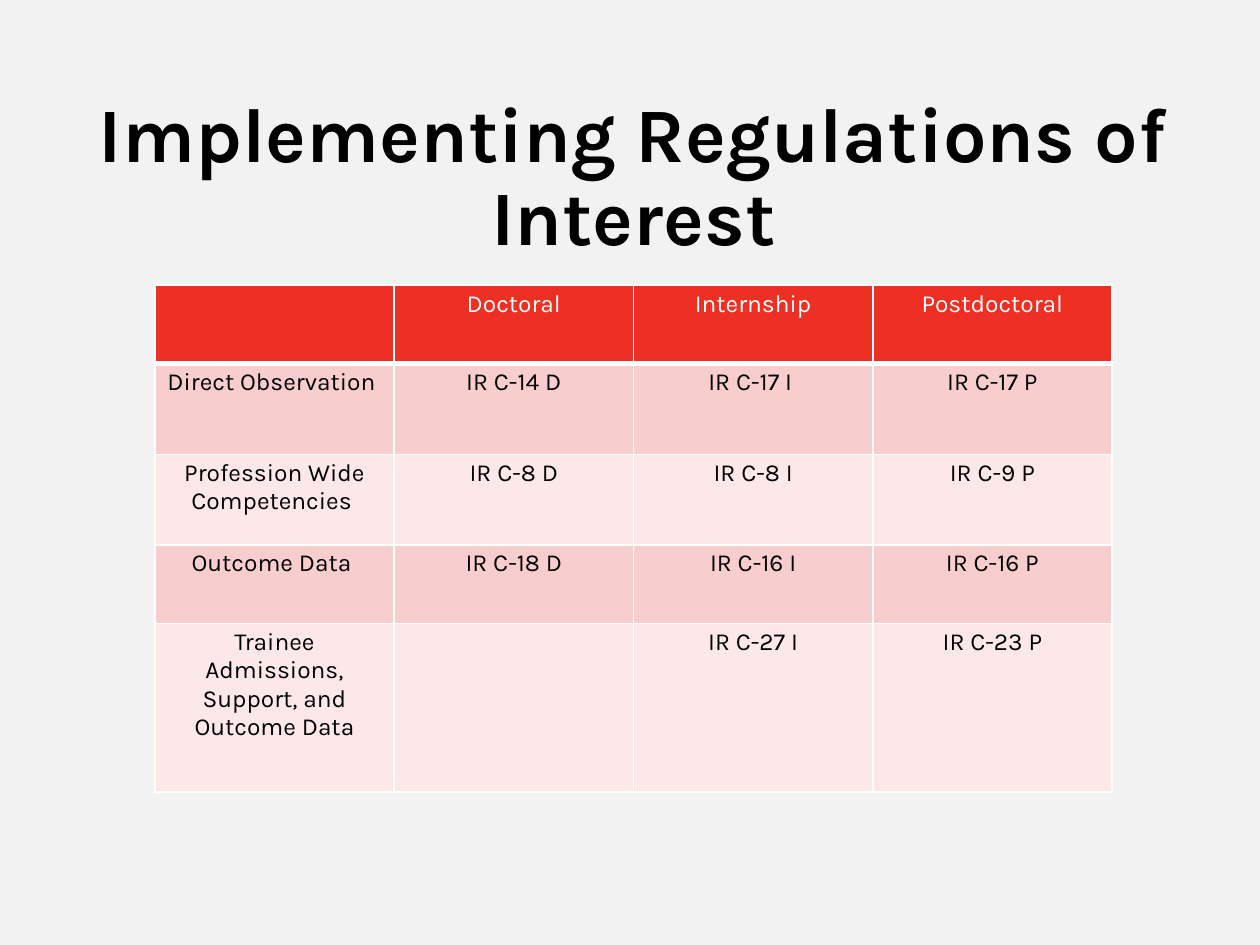
import pptx
import pptx.chart.data
import pptx.dml.color
import pptx.enum.text
import pptx.oxml
import pptx.oxml.ns
import pptx.util
from lxml import etree

TITLE = "Implementing Regulations of Interest"
ROWS = [
    ("", "Doctoral", "Internship", "Postdoctoral"),
    ("Direct Observation ", "IR C-14 D", "IR C-17 I ", "IR C-17 P"),
    ("Profession Wide Competencies ", "IR C-8 D", "IR C-8 I", "IR C-9 P"),
    ("Outcome Data ", "IR C-18 D", "IR C-16 I", "IR C-16 P"),
    ("Trainee Admissions, Support, and Outcome Data", "", "IR C-27 I", "IR C-23 P"),
]
ROW_HEIGHTS = [44.8, 51.8, 51.8, 44.8, 96.4]
COLUMN_WIDTH = 136.75
COLORS = {
    "background": "F2F2F2",
    "title": "000000",
    "header": "ED3023",
    "header_text": "FFFFFF",
    "odd": "F8CDCD",
    "even": "FCE8E8",
    "body_text": "000000",
    "border": "FFFFFF",
}
FONT = "Karla"
Pt = pptx.util.Pt


def color(name):
    """Return the named colour."""
    return pptx.dml.color.RGBColor.from_string(COLORS[name])


def format_text(text_frame, size, color_name, bold=False):
    """Centre the text and set its font."""
    for paragraph in text_frame.paragraphs:
        paragraph.alignment = pptx.enum.text.PP_ALIGN.CENTER
        for run in paragraph.runs:
            run.font.name = FONT
            run.font.size = Pt(size)
            run.font.bold = bold
            run.font.color.rgb = color(color_name)


def add_borders(cell, bottom_width):
    """Draw the four borders of a cell."""
    qn = pptx.oxml.ns.qn
    properties = cell._tc.get_or_add_tcPr()
    for side, width in (("L", 1), ("R", 1), ("T", 1), ("B", bottom_width)):
        line = etree.SubElement(properties, qn(f"a:ln{side}"), w=str(Pt(width)))
        fill = etree.SubElement(line, qn("a:solidFill"))
        etree.SubElement(fill, qn("a:srgbClr"), val=COLORS["border"])


def add_title(slide):
    """Place and format the title."""
    title = slide.shapes.title
    title.left, title.top, title.width, title.height = Pt(41), Pt(60.5), Pt(642), Pt(89.3)
    text_frame = title.text_frame
    text_frame.text = TITLE
    text_frame.word_wrap = True
    text_frame.auto_size = pptx.enum.text.MSO_AUTO_SIZE.NONE
    text_frame.vertical_anchor = pptx.enum.text.MSO_ANCHOR.BOTTOM
    text_frame.margin_left = text_frame.margin_right = 0
    text_frame.margin_top = text_frame.margin_bottom = 0
    text_frame.paragraphs[0].line_spacing = 0.9
    format_text(text_frame, 44, "title", bold=True)


def add_regulations_table(slide):
    """Build the table of regulations by training level."""
    column_count = len(ROWS[0])
    table = slide.shapes.add_table(
        len(ROWS), column_count, Pt(88.5), Pt(163),
        Pt(COLUMN_WIDTH * column_count), Pt(sum(ROW_HEIGHTS)),
    ).table
    for column in table.columns:
        column.width = Pt(COLUMN_WIDTH)
    for row_index, (texts, height) in enumerate(zip(ROWS, ROW_HEIGHTS)):
        table.rows[row_index].height = Pt(height)
        is_header = row_index == 0
        fill_name = "header" if is_header else ("even", "odd")[row_index % 2]
        for column_index, text in enumerate(texts):
            cell = table.cell(row_index, column_index)
            cell.text_frame.text = text
            cell.margin_left = cell.margin_right = Pt(5.2)
            cell.margin_top = cell.margin_bottom = Pt(2.6)
            format_text(cell.text_frame, 14, "header_text" if is_header else "body_text")
            add_borders(cell, 3 if is_header else 1)
            cell.fill.solid()
            cell.fill.fore_color.rgb = color(fill_name)


def main():
    """Build and save the presentation."""
    presentation = pptx.Presentation()
    presentation.slide_width, presentation.slide_height = Pt(720), Pt(540)
    slide = presentation.slides.add_slide(presentation.slide_layouts[5])
    slide.background.fill.solid()
    slide.background.fill.fore_color.rgb = color("background")
    add_title(slide)
    add_regulations_table(slide)
    presentation.save("out.pptx")


if __name__ == "__main__":
    main()
